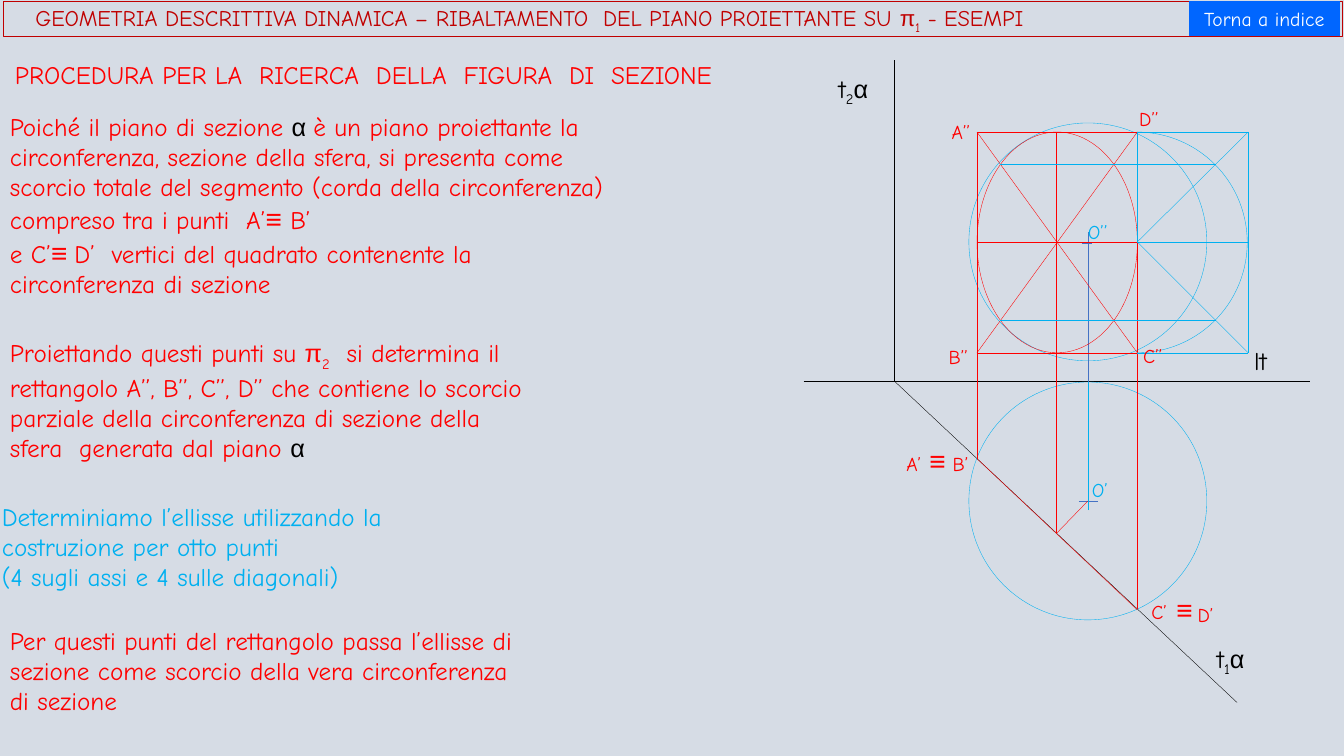
import dataclasses

import lxml.etree
import pptx
import pptx.dml.color
import pptx.enum.shapes
import pptx.enum.text
import pptx.oxml.ns
import pptx.util

Inches = pptx.util.Inches
SHAPE = pptx.enum.shapes.MSO_SHAPE


@dataclasses.dataclass(frozen=True)
class Theme:
    """Colours, fonts, type sizes and line width of the slide."""
    background: str = "D6DCE5"
    black: str = "000000"
    red: str = "FF0000"
    dark_red: str = "C00000"
    cyan: str = "00B0F0"
    blue: str = "4472C4"
    button: str = "0066FF"
    white: str = "FFFFFF"
    font: str = "Comic Neue"
    symbol_font: str = "Arial"
    body: int = 18
    header: int = 16
    label: int = 14
    symbol: int = 20
    line: float = 0.25


T = Theme()


@dataclasses.dataclass(frozen=True)
class Style:
    """Look of one run of text."""
    color: str = T.red
    size: int = T.body
    font: str = T.font
    bold: bool = False
    subscript: bool = False


RED = Style()
CYAN = Style(T.cyan)
BLACK = Style(T.black)
BLACK_SUB = Style(T.black, subscript=True)
ALPHA = Style(T.black, font=T.symbol_font)
PI = Style(font=T.symbol_font)
SUB = Style(subscript=True)
EQUIV = Style(size=T.symbol, font=T.symbol_font)
EQUIV_BOLD = dataclasses.replace(EQUIV, bold=True)
RED_LABEL = Style(size=T.label)
CYAN_LABEL = Style(T.cyan, T.label)
BUTTON = Style(T.white, T.label)
HEADER = Style(T.dark_red, T.header)
HEADER_PI = dataclasses.replace(HEADER, font=T.symbol_font)
HEADER_SUB = dataclasses.replace(HEADER, subscript=True)


def rgb(color):
    """Turn a hex string into a colour."""
    return pptx.dml.color.RGBColor.from_string(color)


def add_runs(p, runs):
    """Add (text, style) runs to a paragraph."""
    for text, style in runs:
        r = p.add_run()
        r.text = text
        r.font.name = style.font
        r.font.size = pptx.util.Pt(style.size)
        r.font.bold = style.bold
        r.font.color.rgb = rgb(style.color)
        if style.subscript:
            r.font._element.set("baseline", "-25000")


def add_text(shapes, x, y, w, h, *paragraphs):
    """Add a text box with one list of runs per paragraph."""
    tf = shapes.add_textbox(Inches(x), Inches(y), Inches(w), Inches(h)).text_frame
    tf.word_wrap = True
    tf.auto_size = pptx.enum.text.MSO_AUTO_SIZE.SHAPE_TO_FIT_TEXT
    for i, runs in enumerate(paragraphs):
        add_runs(tf.add_paragraph() if i else tf.paragraphs[0], runs)


def add_line(shapes, color, x1, y1, x2, y2):
    """Add a thin straight line."""
    c = shapes.add_connector(pptx.enum.shapes.MSO_CONNECTOR.STRAIGHT,
                             Inches(x1), Inches(y1), Inches(x2), Inches(y2))
    c.line.color.rgb = rgb(color)
    c.line.width = pptx.util.Pt(T.line)
    lxml.etree.SubElement(c._element.spPr, pptx.oxml.ns.qn("a:effectLst"))


def add_curve(shapes, kind, color, x, y, w, h):
    """Add an unfilled ellipse or arc."""
    sp = shapes.add_shape(kind, Inches(x), Inches(y), Inches(w), Inches(h))
    sp.shadow.inherit = False
    sp.fill.background()
    sp.line.color.rgb = rgb(color)
    sp.line.width = pptx.util.Pt(T.line)
    return sp


def add_header(s):
    """Format the title as the framed bar and add the index button."""
    sp = s.shapes.title
    sp.left, sp.top, sp.width, sp.height = map(Inches, (0.03, 0.01, 13.28, 0.35))
    sp.line.color.rgb = rgb(T.dark_red)
    sp.line.width = pptx.util.Pt(T.line)
    tf = sp.text_frame
    tf.auto_size = pptx.enum.text.MSO_AUTO_SIZE.NONE
    tf.vertical_anchor = pptx.enum.text.MSO_ANCHOR.MIDDLE
    tf.margin_left = Inches(0.32)
    p = tf.paragraphs[0]
    p.alignment = pptx.enum.text.PP_ALIGN.LEFT
    p.line_spacing = 0.9
    add_runs(p, [("GEOMETRIA DESCRITTIVA DINAMICA – RIBALTAMENTO  DEL PIANO PROIETTANTE SU ", HEADER),
                 ("π", HEADER_PI), ("1", HEADER_SUB), (" - ESEMPI", HEADER)])

    button = s.shapes.add_shape(SHAPE.ACTION_BUTTON_CUSTOM, Inches(11.79), Inches(0.01),
                                Inches(1.5), Inches(0.35))
    button.shadow.inherit = False
    button.fill.solid()
    button.fill.fore_color.rgb = rgb(T.button)
    button.line.fill.background()
    button.text_frame.vertical_anchor = pptx.enum.text.MSO_ANCHOR.MIDDLE
    p = button.text_frame.paragraphs[0]
    p.alignment = pptx.enum.text.PP_ALIGN.CENTER
    add_runs(p, [("Torna a indice", BUTTON)])


def add_explanation(shapes):
    """Add the column of text that explains the procedure."""
    add_text(shapes, 0.05, 0.54, 7.81, 0.4,
             [("PROCEDURA PER LA  RICERCA  DELLA  FIGURA  DI  SEZIONE", RED)])
    add_text(shapes, 0, 1.05, 6.1, 1.99,
             [("Poiché il piano di sezione ", RED), ("α ", ALPHA),
              ("è un piano proiettante la circonferenza, sezione della sfera, si presenta come "
               "scorcio totale del segmento (corda della circonferenza) compreso tra i punti  A’", RED),
              ("≡", EQUIV_BOLD), (" B’", RED)],
             [("e C’", RED), ("≡", EQUIV_BOLD), (" ", ALPHA),
              ("D’  vertici del quadrato contenente la circonferenza di sezione", RED)])
    add_text(shapes, 0, 3.3, 5.36, 1.31,
             [("Proiettando questi punti su ", RED), ("π", PI), ("2", SUB),
              ("  si determina il rettangolo A’’, B’’, C’’, D’’ che contiene lo scorcio parziale "
               "della circonferenza di sezione della sfera  generata dal piano ", RED), ("α", ALPHA)])
    add_text(shapes, -0.08, 4.92, 4.61, 1.01,
             [("Determiniamo l’ellisse utilizzando la costruzione per otto punti", CYAN)],
             [("(4 sugli assi e 4 sulle diagonali)", CYAN)])
    add_text(shapes, 0, 6.15, 5.36, 1.01,
             [("Per questi punti del rettangolo passa l’ellisse di sezione come scorcio "
               "della vera circonferenza di sezione", RED)])


def add_construction(shapes):
    """Draw the two projections of the sphere and of its section."""
    left, axis, right, far = 9.69, 10.48, 11.28, 12.38
    top, middle, bottom, ground = 1.31, 2.4, 3.5, 3.78
    centre, trace, diameter = 10.79, 8.87, 2.36

    for end in ((7.97, ground, 12.99, ground), (trace, ground, 12.27, 6.97),
                (trace, ground, trace, 0.6)):
        add_line(shapes, T.black, *end)
    for y in (3.79, 1.22):
        add_curve(shapes, SHAPE.OVAL, T.cyan, centre - diameter / 2, y, diameter, diameter)
    for end in ((10.7, 4.97, 10.89, 4.97), (centre, 5, centre, 2.3), (10.73, 2.41, 10.83, 2.41)):
        add_line(shapes, T.blue, *end)
    for end in ((left, 4.55, right, 6.05), (centre, 4.97, axis, 5.29),
                (left, 4.55, left, top), (right, 6.04, right, top), (axis, 5.29, axis, top),
                (left, middle, right, middle), (left, top, right, top),
                (left, bottom, right, bottom), (left, top, right, bottom),
                (left, bottom, right, top)):
        add_line(shapes, T.red, *end)
    add_line(shapes, T.cyan, centre, 5.06, centre, 3.79)
    add_curve(shapes, SHAPE.OVAL, T.red, left, top, right - left, bottom - top)

    half = shapes.add_group_shape().shapes
    for y in (top, middle, bottom):
        add_line(half, T.cyan, right, y, far, y)
    for y in (top, bottom):
        add_line(half, T.cyan, right, middle, far, y)
    add_line(half, T.cyan, right, top, right, middle)
    add_line(half, T.cyan, far, top, far, bottom)
    arc = add_curve(half, SHAPE.ARC, T.cyan, 10.18, top, bottom - top, bottom - top)
    arc.adjustments[1] = 53.86
    for y in (1.63, 3.18):
        add_line(shapes, T.cyan, 9.92, y, 12.06, y)


def add_labels(shapes):
    """Name the points, traces and ground line."""
    for x, y, text, style in (
            (10.73, 4.69, "O’", CYAN_LABEL), (10.69, 2.13, "O’’", CYAN_LABEL),
            (11.2, 1.01, "D’’", RED_LABEL), (11.24, 3.36, "C’’", RED_LABEL),
            (9.31, 3.37, "B’’", RED_LABEL), (9.34, 1.14, "A’’", RED_LABEL),
            (11.78, 5.93, "D’", RED_LABEL), (11.32, 5.9, "C’", RED_LABEL),
            (9.35, 4.43, "B’", RED_LABEL), (8.89, 4.43, "A’", RED_LABEL)):
        add_text(shapes, x, y, 0.51, 0.34, [(text, style)])
    for x, y in ((9.12, 4.35), (11.57, 5.83)):
        add_text(shapes, x, y, 0.37, 0.44, [("≡", EQUIV)])
    for x, y, w, index in ((11.97, 6.33, 0.56, "1"), (8.22, 0.68, 0.86, "2")):
        add_text(shapes, x, y, w, 0.4, [("t", BLACK), (index, BLACK_SUB), ("α", ALPHA)])
    add_text(shapes, 12.34, 3.38, 0.56, 0.4, [("lt", BLACK)])


def main():
    """Build the slide and save it."""
    prs = pptx.Presentation()
    prs.slide_width, prs.slide_height = Inches(13.33), Inches(7.5)
    s = prs.slides.add_slide(prs.slide_layouts[5])
    s.background.fill.solid()
    s.background.fill.fore_color.rgb = rgb(T.background)
    add_construction(s.shapes)
    add_labels(s.shapes)
    add_explanation(s.shapes)
    add_header(s)
    prs.save("out.pptx")


if __name__ == "__main__":
    main()
